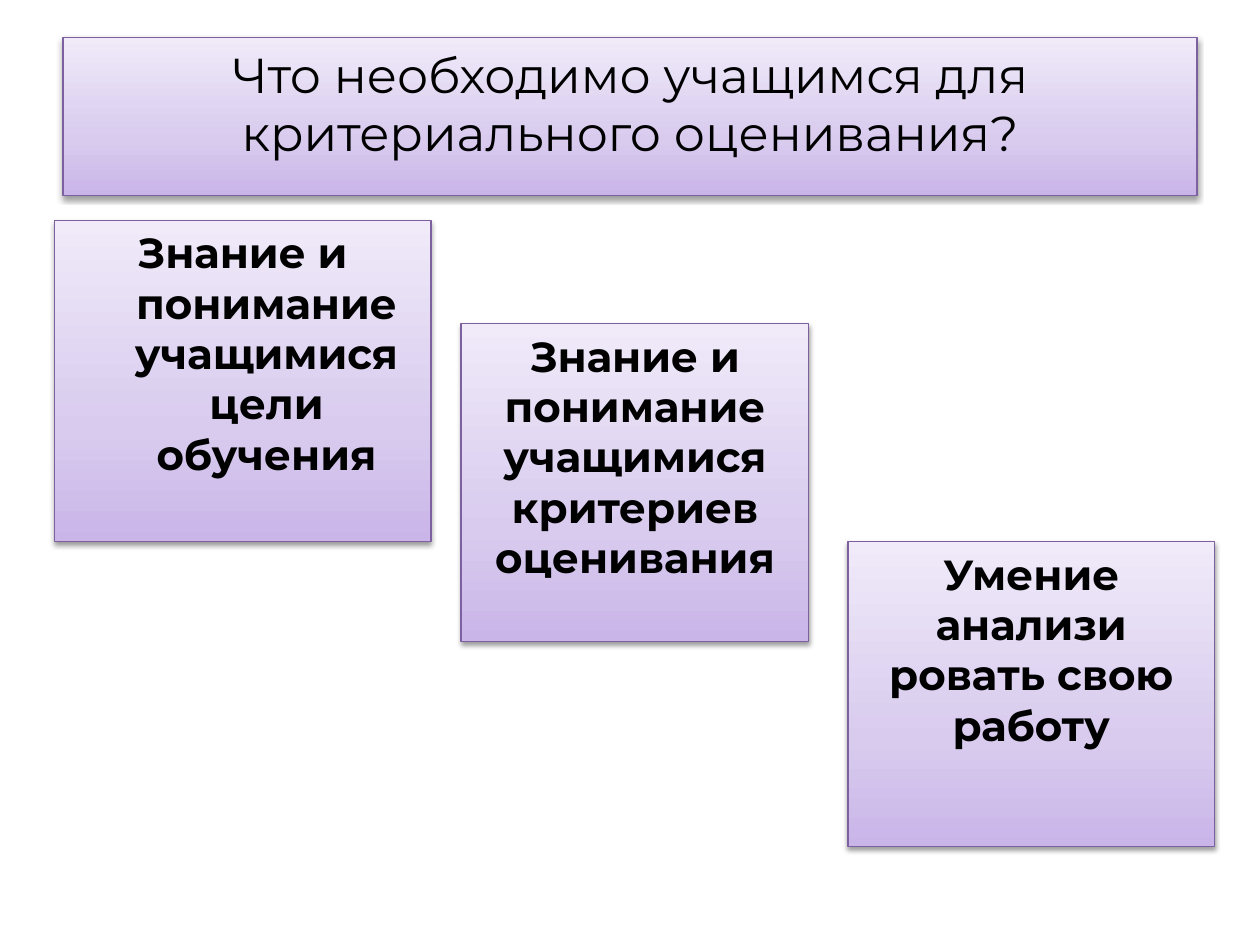
from copy import deepcopy

from lxml import etree
from pptx import Presentation
from pptx.dml.color import RGBColor
from pptx.enum.shapes import MSO_SHAPE
from pptx.enum.text import MSO_ANCHOR, MSO_AUTO_SIZE, PP_ALIGN
from pptx.oxml.ns import qn
from pptx.util import Inches, Pt

BLACK = RGBColor(0x00, 0x00, 0x00)
BORDER = RGBColor(0x7D, 0x60, 0xA0)
STOPS = [
    (0, RGBColor(0xC9, 0xB5, 0xE8)),
    (0.35, RGBColor(0xD8, 0xCB, 0xEE)),
    (1, RGBColor(0xF0, 0xEA, 0xF9)),
]
FRAME = {
    "word_wrap": True,
    "auto_size": MSO_AUTO_SIZE.NONE,
    "vertical_anchor": MSO_ANCHOR.TOP,
}


def add_shadow(sp):
    sp.shadow.inherit = False
    effects = sp.element.spPr.find(qn("a:effectLst"))
    shadow = etree.SubElement(effects, qn("a:outerShdw"), blurRad=str(Pt(3.1)),
                              dist=str(Pt(1.6)), dir="5400000", rotWithShape="0")
    color = etree.SubElement(shadow, qn("a:srgbClr"), val=str(BLACK))
    etree.SubElement(color, qn("a:alpha"), val="38000")


def style_box(sp, lines, font):
    sp.fill.gradient()
    sp.fill.gradient_angle = 90
    stop_list = sp.element.spPr.find(qn("a:gradFill")).find(qn("a:gsLst"))
    stop_list.append(deepcopy(stop_list[0]))
    for stop, (position, color) in zip(sp.fill.gradient_stops, STOPS):
        stop.position = position
        stop.color.rgb = color
    sp.line.color.rgb = BORDER
    sp.line.width = Pt(0.75)
    add_shadow(sp)
    tf = sp.text_frame
    for name, value in FRAME.items():
        setattr(tf, name, value)
    tf.text = "\n".join(lines)
    for p in tf.paragraphs:
        p.alignment = PP_ALIGN.CENTER
        r = p.runs[0]
        r.font.color.rgb = BLACK
        for name, value in font.items():
            setattr(r.font, name, value)


prs = Presentation()
prs.slide_width = Inches(10)
prs.slide_height = Inches(7.5)
s = prs.slides.add_slide(prs.slide_layouts[5])

title = s.shapes.title
title.left, title.top = Inches(0.5), Inches(0.3)
title.width, title.height = Inches(9), Inches(1.25)
style_box(title, ["Что необходимо учащимся для критериального оценивания?"],
          {"name": "Montserrat", "size": Pt(28), "bold": False})

boxes = [
    (0.43, 1.75, 2.99, 2.55, 0.38, ["Знание и понимание учащимися цели обучения"]),
    (3.66, 2.57, 2.76, 2.52, 0, ["Знание и понимание учащимися критериев оценивания"]),
    (6.73, 4.3, 2.91, 2.42, 0, ["Умение анализи", "ровать свою работу"]),
]
for left, top, width, height, indent, lines in boxes:
    sp = s.shapes.add_shape(MSO_SHAPE.RECTANGLE, Inches(left), Inches(top),
                            Inches(width), Inches(height))
    style_box(sp, lines, {"name": "Montserrat", "size": Pt(24), "bold": True})
    for p in sp.text_frame.paragraphs:
        pPr = p._p.get_or_add_pPr()
        pPr.set("marL", str(Inches(indent)))
        pPr.set("indent", str(-Inches(indent)))

prs.save("out.pptx")
